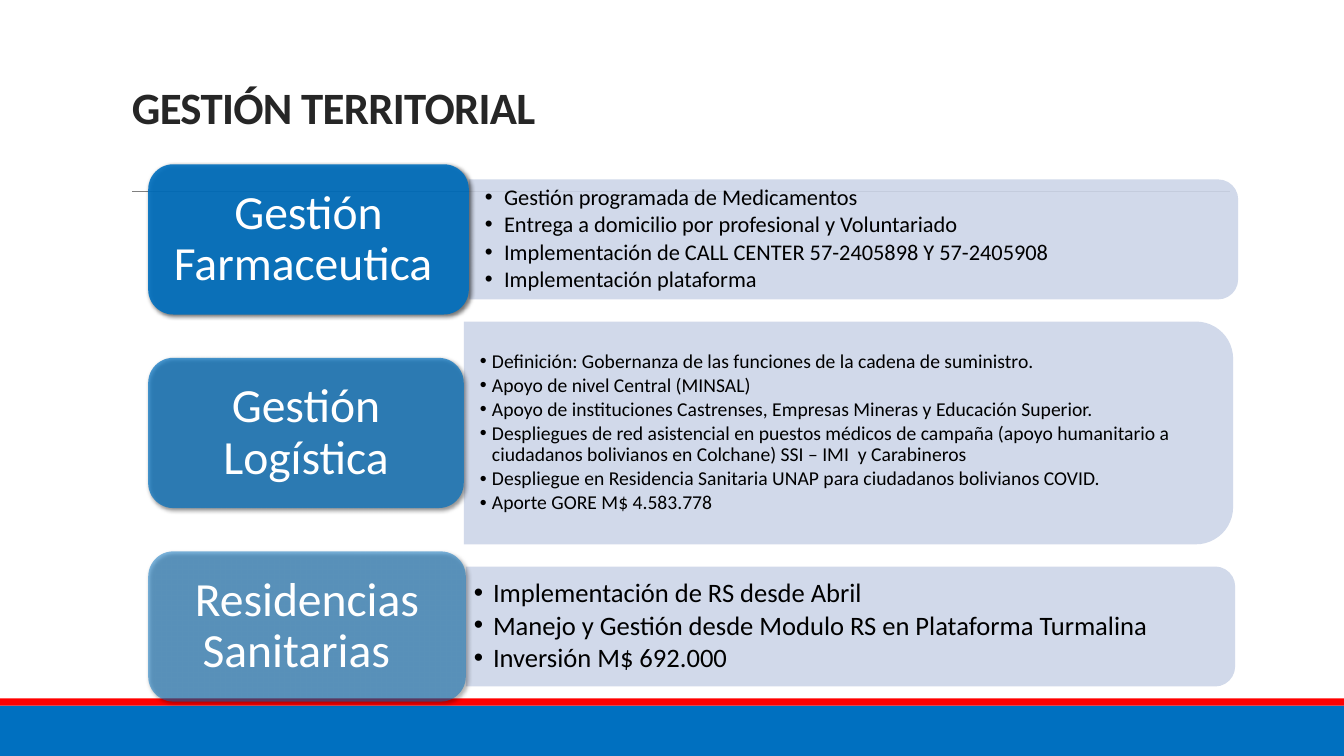
from lxml.etree import SubElement
from pptx import Presentation
from pptx.dml.color import RGBColor
from pptx.enum.shapes import MSO_CONNECTOR, MSO_SHAPE
from pptx.enum.text import MSO_ANCHOR, PP_ALIGN
from pptx.oxml.ns import qn
from pptx.util import Inches, Pt

TITLE = "GESTIÓN TERRITORIAL"
ROWS = [
    {"label": "Gestión Farmaceutica ", "label_width": 3.18, "alpha": 90,
     "band_height": 1.19, "size": 16, "indent": 0.19, "insets": (0.16, 0.08),
     "bullets": ["Gestión programada de Medicamentos",
                 "Entrega a domicilio por profesional y Voluntariado",
                 "Implementación de CALL CENTER 57-2405898 Y 57-2405908",
                 "Implementación plataforma"]},
    {"label": "Gestión Logística", "label_width": 3.13, "alpha": 70,
     "band_height": 2.21, "size": 14, "indent": 0.12, "insets": (0.16, 0.08),
     "bullets": ["Definición: Gobernanza de las funciones de la cadena de suministro.",
                 "Apoyo de nivel Central (MINSAL)",
                 "Apoyo de instituciones Castrenses, Empresas Mineras y Educación Superior.",
                 "Despliegues de red asistencial en puestos médicos de campaña (apoyo humanitario "
                 "a ciudadanos bolivianos en Colchane) SSI – IMI  y Carabineros",
                 "Despliegue en Residencia Sanitaria UNAP para ciudadanos bolivianos COVID.",
                 "Aporte GORE M$ 4.583.778"]},
    {"label": "Residencias Sanitarias  ", "label_width": 3.15, "alpha": 50,
     "band_height": 1.19, "size": 19, "indent": 0.19, "insets": (0.08, 0.04),
     "bullets": ["Implementación de RS desde Abril",
                 "Manejo y Gestión desde Modulo RS en Plataforma Turmalina",
                 "Inversión M$ 692.000"]},
]

FONT = "Calibri"
BLUE = RGBColor(0x00, 0x70, 0xC0)
RED = RGBColor(0xFF, 0x00, 0x00)
GRAY = RGBColor(0x80, 0x80, 0x80)
DARK = RGBColor(0x26, 0x26, 0x26)
BAND = RGBColor(0xCC, 0xD5, 0xE8)
BLACK = RGBColor(0x00, 0x00, 0x00)
WHITE = RGBColor(0xFF, 0xFF, 0xFF)

SLIDE_WIDTH, SLIDE_HEIGHT = 13.33, 7.5
LABEL_LEFT, LABEL_TOP, LABEL_HEIGHT = 1.47, 1.63, 1.49
LABEL_PADDING = 0.07
ROW_PITCH = 1.92
BAND_WIDTH = 7.63

presentation = Presentation()
presentation.slide_width = Inches(SLIDE_WIDTH)
presentation.slide_height = Inches(SLIDE_HEIGHT)
slide = presentation.slides.add_slide(presentation.slide_layouts[6])


def add_filled(kind, left, top, width, height, color, alpha=100, rotation=0):
    shape = slide.shapes.add_shape(kind, Inches(left), Inches(top), Inches(width), Inches(height))
    shape.shadow.inherit = False
    shape.fill.solid()
    shape.fill.fore_color.rgb = color
    shape.line.fill.background()
    shape.rotation = rotation
    if alpha < 100:
        fill = shape._element.spPr.find(qn("a:solidFill"))
        SubElement(fill[0], qn("a:alpha"), val=str(alpha * 1000))
    return shape


def add_drop_shadow(shape):
    effects = shape._element.spPr.find(qn("a:effectLst"))
    shadow = SubElement(effects, qn("a:outerShdw"), blurRad=str(Pt(3)), dist=str(Pt(2)),
                        dir=str(45 * 60000), algn="ctr", rotWithShape="0")
    color = SubElement(shadow, qn("a:srgbClr"), val="000000")
    SubElement(color, qn("a:alpha"), val="60000")


def add_text_box(left, top, width, height):
    return slide.shapes.add_textbox(Inches(left), Inches(top), Inches(width), Inches(height))


def write_text(shape, lines, *, size, color, bold=False, align=PP_ALIGN.LEFT,
               anchor=MSO_ANCHOR.MIDDLE, insets=(0.1, 0.05), line_spacing=0.9,
               space_after=0, indent=0, tracking=0):
    frame = shape.text_frame
    frame.word_wrap = True
    frame.vertical_anchor = anchor
    frame.margin_left = frame.margin_right = Inches(insets[0])
    frame.margin_top = frame.margin_bottom = Inches(insets[1])
    for index, line in enumerate(lines):
        paragraph = frame.add_paragraph() if index else frame.paragraphs[0]
        paragraph.alignment = align
        paragraph.line_spacing = line_spacing
        paragraph.space_after = Pt(space_after)
        run = paragraph.add_run()
        run.text = line
        run.font.name = FONT
        run.font.size = Pt(size)
        run.font.bold = bold
        run.font.color.rgb = color
        if tracking:
            run._r.get_or_add_rPr().set("spc", str(int(tracking * 100)))
        if indent:
            properties = paragraph._p.get_or_add_pPr()
            properties.set("marL", str(Inches(indent)))
            properties.set("indent", str(-Inches(indent)))
            SubElement(properties, qn("a:buFont"), typeface="Arial")
            SubElement(properties, qn("a:buChar"), char="•")


def add_row(row, label_top):
    band_height = row["band_height"]
    label_width = row["label_width"]
    band_left = LABEL_LEFT + label_width
    middle = label_top + LABEL_HEIGHT / 2
    add_filled(MSO_SHAPE.ROUND_2_SAME_RECTANGLE,
               band_left + (BAND_WIDTH - band_height) / 2, middle - BAND_WIDTH / 2,
               band_height, BAND_WIDTH, BAND, alpha=90, rotation=90)
    padding = band_height * 0.05
    bullets = add_text_box(band_left, middle - band_height / 2 + padding,
                           BAND_WIDTH - padding, band_height - 2 * padding)
    write_text(bullets, row["bullets"], size=row["size"], color=BLACK, insets=row["insets"],
               space_after=round(row["size"] * 0.14, 1), indent=row["indent"])
    label = add_filled(MSO_SHAPE.ROUNDED_RECTANGLE, LABEL_LEFT, label_top,
                       label_width, LABEL_HEIGHT, BLUE, alpha=row["alpha"])
    add_drop_shadow(label)
    caption = add_text_box(LABEL_LEFT + LABEL_PADDING, label_top + LABEL_PADDING,
                           label_width - 2 * LABEL_PADDING, LABEL_HEIGHT - 2 * LABEL_PADDING)
    write_text(caption, [row["label"]], size=34, color=WHITE, align=PP_ALIGN.CENTER,
               insets=(0.14, 0.07))


add_filled(MSO_SHAPE.RECTANGLE, 0, 7, SLIDE_WIDTH, 0.5, BLUE)
add_filled(MSO_SHAPE.RECTANGLE, 0, 6.93, SLIDE_WIDTH, 0.07, RED)

rule = slide.shapes.add_connector(MSO_CONNECTOR.STRAIGHT, Inches(1.31), Inches(1.9),
                                  Inches(12.2), Inches(1.9))
rule.line.color.rgb = GRAY
rule.line.width = Pt(0.5)
SubElement(rule._element.spPr, qn("a:effectLst"))

write_text(add_text_box(1.21, 0.12, 8.12, 1.26), [TITLE], size=32, color=DARK, bold=True,
           anchor=MSO_ANCHOR.BOTTOM, line_spacing=0.85, tracking=-0.5)

for position, row in enumerate(ROWS):
    add_row(row, LABEL_TOP + position * ROW_PITCH)

presentation.save("out.pptx")
